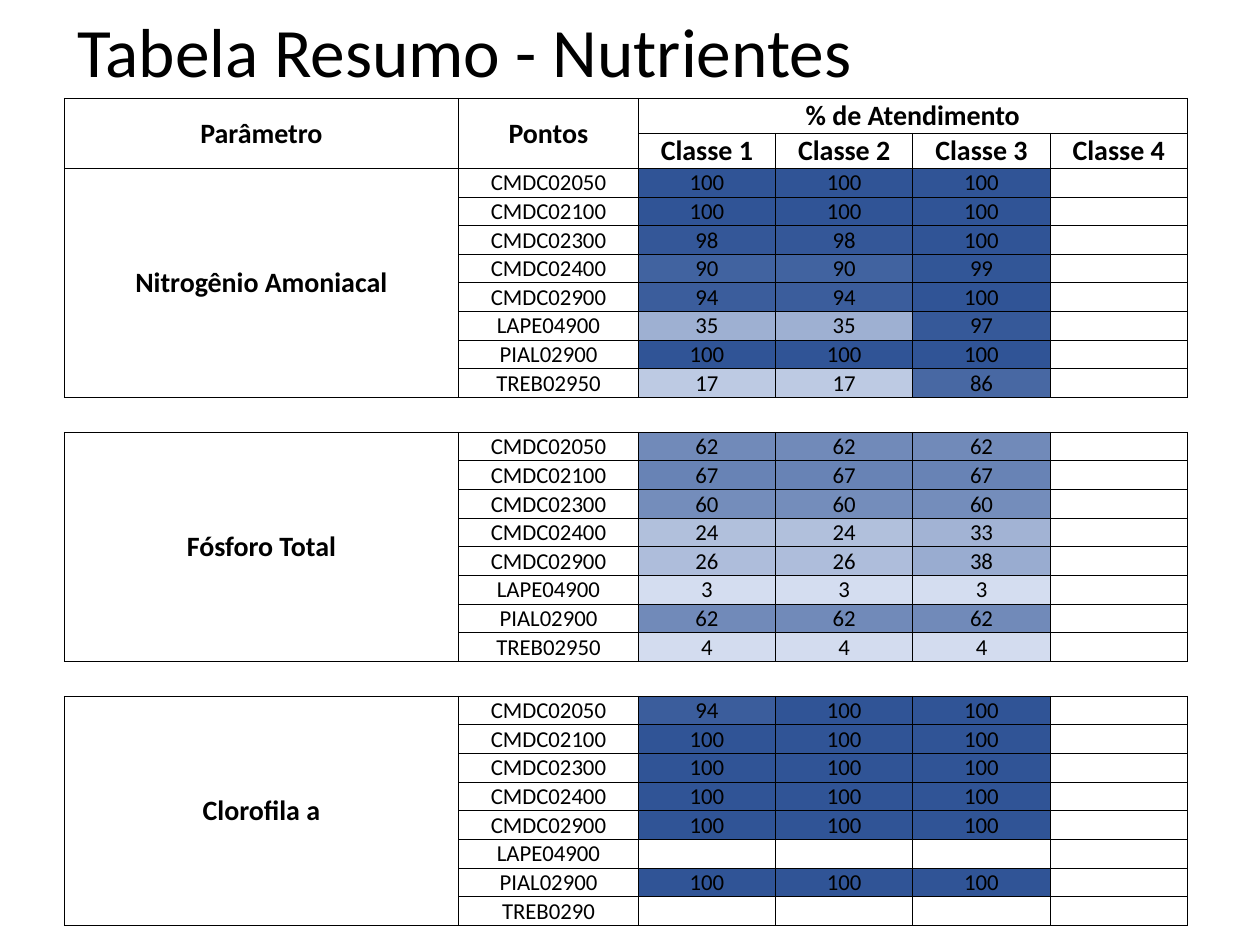
from dataclasses import dataclass
from math import ceil

from lxml.etree import SubElement
from pptx import Presentation
from pptx.dml.color import RGBColor
from pptx.enum.text import MSO_ANCHOR, PP_ALIGN
from pptx.oxml.ns import qn
from pptx.util import Pt


@dataclass(frozen=True)
class Theme:
    font: str = "Calibri"
    text: RGBColor = RGBColor(0, 0, 0)
    low: RGBColor = RGBColor(0xD9, 0xE1, 0xF2)
    high: RGBColor = RGBColor(0x30, 0x54, 0x96)
    title: float = 39.6
    heading: int = 16
    body: int = 13
    border: float = 0.5


THEME = Theme()
POINTS = ["CMDC02050", "CMDC02100", "CMDC02300", "CMDC02400",
          "CMDC02900", "LAPE04900", "PIAL02900", "TREB02950"]
PARAMETERS = [
    ("Nitrogênio Amoniacal", POINTS,
     [(100, 100, 100), (100, 100, 100), (98, 98, 100), (90, 90, 99),
      (94, 94, 100), (35, 35, 97), (100, 100, 100), (17, 17, 86)]),
    ("Fósforo Total", POINTS,
     [(62, 62, 62), (67, 67, 67), (60, 60, 60), (24, 24, 33),
      (26, 26, 38), (3, 3, 3), (62, 62, 62), (4, 4, 4)]),
    ("Clorofila a", POINTS[:-1] + ["TREB0290"],
     [(94, 100, 100), (100, 100, 100), (100, 100, 100), (100, 100, 100),
      (100, 100, 100), (), (100, 100, 100), ()]),
]
CLASSES = ["Classe 1", "Classe 2", "Classe 3", "Classe 4"]
COL_WIDTHS = [225.2, 102.8] + [78.45] * 4
HEADING_HEIGHT, BODY_HEIGHT = 20, 16.38
HEADER_ROWS = 2
BLOCK_STEP = len(POINTS) + 1
GAP_ROWS = [HEADER_ROWS + BLOCK_STEP * i - 1 for i in range(1, len(PARAMETERS))]
HEADING_ROWS = [*range(HEADER_ROWS), *GAP_ROWS]
ROW_COUNT = HEADER_ROWS + BLOCK_STEP * len(PARAMETERS) - 1


def write(cell, text, heading=False, anchor=MSO_ANCHOR.BOTTOM):
    cell.vertical_anchor = anchor
    p = cell.text_frame.paragraphs[0]
    p.text = str(text)
    p.font.size = Pt(THEME.heading if heading else THEME.body)
    p.font.bold = heading


def set_borders(cell, sides):
    """Rule the named sides (letters of LRTB) and clear the others."""
    tc_pr = cell._tc.get_or_add_tcPr()
    for side in "LRTB":
        ln = SubElement(tc_pr, qn(f"a:ln{side}"), w=str(Pt(THEME.border)))
        if side in sides:
            fill = SubElement(ln, qn("a:solidFill"))
            SubElement(fill, qn("a:srgbClr"), val=str(THEME.text))
        else:
            SubElement(ln, qn("a:noFill"))


prs = Presentation()
prs.slide_width, prs.slide_height = Pt(720), Pt(540)
s = prs.slides.add_slide(prs.slide_layouts[6])

# Title
tf = s.shapes.add_textbox(Pt(37), Pt(9), Pt(648), Pt(38.9)).text_frame
tf.word_wrap = True
tf.vertical_anchor = MSO_ANCHOR.MIDDLE
p = tf.paragraphs[0]
p.text = "Tabela Resumo - Nutrientes"
p.font.name = THEME.font
p.font.size = Pt(THEME.title)
p.font.color.rgb = THEME.text

# Table grid
row_heights = [HEADING_HEIGHT if r in HEADING_ROWS else BODY_HEIGHT
               for r in range(ROW_COUNT)]
table = s.shapes.add_table(ROW_COUNT, len(COL_WIDTHS), Pt(36.8), Pt(56.2),
                           Pt(sum(COL_WIDTHS)), Pt(sum(row_heights))).table
table.first_row = table.horz_banding = False
for column, width in zip(table.columns, COL_WIDTHS):
    column.width = Pt(width)
for r, (row, height) in enumerate(zip(table.rows, row_heights)):
    row.height = Pt(height)
    for cell in row.cells:
        cell.margin_left = cell.margin_right = Pt(0.72)
        cell.margin_top, cell.margin_bottom = Pt(0.5), 0
        set_borders(cell, "TB" if r in GAP_ROWS else "LRTB")
        cell.fill.background()
        p = cell.text_frame.paragraphs[0]
        p.alignment = PP_ALIGN.CENTER
        p.font.name = THEME.font
        p.font.size = Pt(THEME.body)
        p.font.color.rgb = THEME.text

# Header
for c, label in enumerate(["Parâmetro", "Pontos"]):
    table.cell(0, c).merge(table.cell(1, c))
    write(table.cell(0, c), label, True, MSO_ANCHOR.MIDDLE)
table.cell(0, 2).merge(table.cell(0, 5))
write(table.cell(0, 2), "% de Atendimento", True)
for c, label in enumerate(CLASSES, start=2):
    write(table.cell(1, c), label, True)

# One block per parameter, shaded from low to high attendance
for block, (parameter, points, rows) in enumerate(PARAMETERS):
    top = HEADER_ROWS + BLOCK_STEP * block
    table.cell(top, 0).merge(table.cell(top + len(points) - 1, 0))
    write(table.cell(top, 0), parameter, True, MSO_ANCHOR.MIDDLE)
    for r, (point, values) in enumerate(zip(points, rows), start=top):
        write(table.cell(r, 1), point)
        for c, value in enumerate(values, start=2):
            cell = table.cell(r, c)
            write(cell, value)
            cell.fill.solid()
            cell.fill.fore_color.rgb = RGBColor(
                *(ceil(lo + (hi - lo) * value / 100)
                  for lo, hi in zip(THEME.low, THEME.high)))

prs.save("out.pptx")
